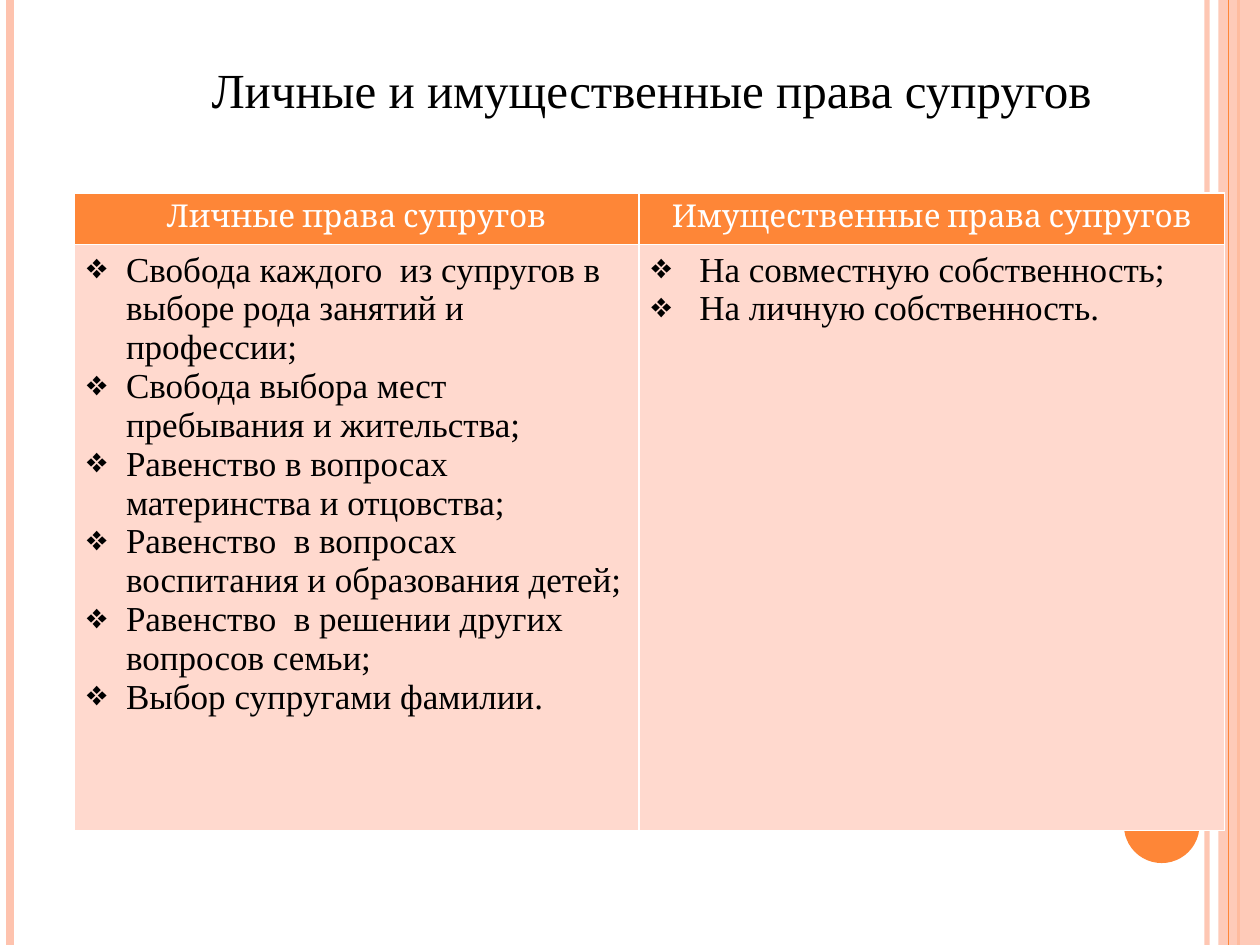
from lxml import etree
from pptx import Presentation
from pptx.dml.color import RGBColor
from pptx.enum.shapes import MSO_CONNECTOR, MSO_SHAPE
from pptx.enum.text import MSO_AUTO_SIZE, PP_ALIGN
from pptx.oxml.ns import qn
from pptx.util import Inches, Pt

STRAIGHT = MSO_CONNECTOR.STRAIGHT
RECTANGLE, OVAL = MSO_SHAPE.RECTANGLE, MSO_SHAPE.OVAL
CENTER, LEFT = PP_ALIGN.CENTER, PP_ALIGN.LEFT

WIDTH, HEIGHT = 10, 7.5
COLORS = {
    "accent": "FE8637",
    "stripe": "FEC3AE",
    "body": "FFD9CE",
    "text": "000000",
    "white": "FFFFFF",
}
BODY_FONT, HEADER_FONT = "Times New Roman", "Cambria"

# Each column: heading, hanging indent in inches, rights
COLUMNS = [
    ("Личные права супругов", 0.31, [
        "Свобода каждого  из супругов в выборе рода занятий и профессии;",
        "Свобода выбора мест пребывания и жительства;",
        "Равенство в вопросах материнства и отцовства;",
        "Равенство  в вопросах воспитания и образования детей;",
        "Равенство  в решении других вопросов семьи;",
        "Выбор супругами фамилии.",
    ]),
    ("Имущественные права супругов", 0.38, [
        "На совместную собственность;",
        "На личную собственность.",
    ]),
]
COLUMN_WIDTHS = [4.48, 4.65]
ROW_HEIGHTS = [0.41, 4.65]


def rgb(name):
    return RGBColor.from_string(COLORS[name])


def set_alpha(element, percent):
    color = next(element.iter(qn("a:srgbClr")))
    etree.SubElement(color, qn("a:alpha"), val=str(percent * 1000))


def add_vertical_line(page, x, color, width, alpha=100):
    line = page.shapes.add_connector(
        STRAIGHT, Inches(x), 0, Inches(x), Inches(HEIGHT))
    line.line.color.rgb = rgb(color)
    line.line.width = Pt(width)
    properties = line._element.spPr
    if alpha < 100:
        set_alpha(properties, alpha)
    etree.SubElement(properties, qn("a:effectLst"))


def add_filled_shape(page, kind, bounds, color, alpha=100):
    shape = page.shapes.add_shape(kind, *map(Inches, bounds))
    shape.shadow.inherit = False
    shape.fill.solid()
    shape.fill.fore_color.rgb = rgb(color)
    shape.line.fill.background()
    if alpha < 100:
        set_alpha(shape._element.spPr, alpha)


def style_paragraph(para, font_name, size, color, alignment):
    para.alignment = alignment
    para.font.name = font_name
    para.font.size = Pt(size)
    para.font.color.rgb = rgb(color)
    para.font.bold = False


def add_title(page, text):
    box = page.shapes.add_textbox(*map(Inches, (1.54, 0.42, 7.26, 0.57)))
    frame = box.text_frame
    frame.word_wrap = False
    frame.auto_size = MSO_AUTO_SIZE.SHAPE_TO_FIT_TEXT
    frame.text = text
    style_paragraph(frame.paragraphs[0], BODY_FONT, 28, "text", CENTER)


def add_bullet(para, indent):
    properties = para._p.get_or_add_pPr()
    properties.set("marL", str(Inches(indent)))
    properties.set("indent", str(-Inches(indent)))
    # Bullet markup comes before the default run properties
    bullet = etree.Element(qn("a:buChar"), char="❖")
    properties.insert(0, bullet)


def set_borders(cell, bottom_width):
    properties = cell._tc.get_or_add_tcPr()
    widths = {"a:lnL": 1, "a:lnR": 1, "a:lnT": 1, "a:lnB": bottom_width}
    for index, (tag, width) in enumerate(widths.items()):
        border = etree.Element(qn(tag), w=str(Pt(width)))
        fill = etree.SubElement(border, qn("a:solidFill"))
        etree.SubElement(fill, qn("a:srgbClr"), val=COLORS["white"])
        properties.insert(index, border)


def fill_cell(cell, lines, color):
    cell.fill.solid()
    cell.fill.fore_color.rgb = rgb(color)
    set_borders(cell, 1)
    cell.text_frame.text = "\n".join(lines)
    return cell.text_frame.paragraphs


def add_rights_table(page):
    frame = page.shapes.add_table(
        len(ROW_HEIGHTS), len(COLUMNS), Inches(0.59), Inches(1.53),
        Inches(sum(COLUMN_WIDTHS)), Inches(sum(ROW_HEIGHTS)))
    table = frame.table
    table.horz_banding = False
    for row, height in zip(table.rows, ROW_HEIGHTS):
        row.height = Inches(height)
    for index, (heading, indent, rights) in enumerate(COLUMNS):
        table.columns[index].width = Inches(COLUMN_WIDTHS[index])
        for para in fill_cell(table.cell(0, index), [heading], "accent"):
            style_paragraph(para, HEADER_FONT, 18, "white", CENTER)
        for para in fill_cell(table.cell(1, index), rights, "body"):
            style_paragraph(para, BODY_FONT, 20, "text", LEFT)
            add_bullet(para, indent)


def main():
    deck = Presentation()
    deck.slide_width, deck.slide_height = Inches(WIDTH), Inches(HEIGHT)
    page = deck.slides.add_slide(deck.slide_layouts[6])

    # Edge stripes and corner disc
    add_vertical_line(page, 9.58, "stripe", 3, alpha=93)
    add_vertical_line(page, 0.08, "stripe", 4.5)
    add_vertical_line(page, 9.83, "accent", 1.5)
    add_filled_shape(page, RECTANGLE, (9.67, 0, 0.33, HEIGHT), "stripe", alpha=87)
    add_vertical_line(page, 9.75, "accent", 0.75)
    add_filled_shape(page, OVAL, (8.92, 6.25, 0.6, 0.6), "accent")

    # Title and table
    add_title(page, "Личные и имущественные права супругов")
    add_rights_table(page)
    deck.save("out.pptx")


if __name__ == "__main__":
    main()
